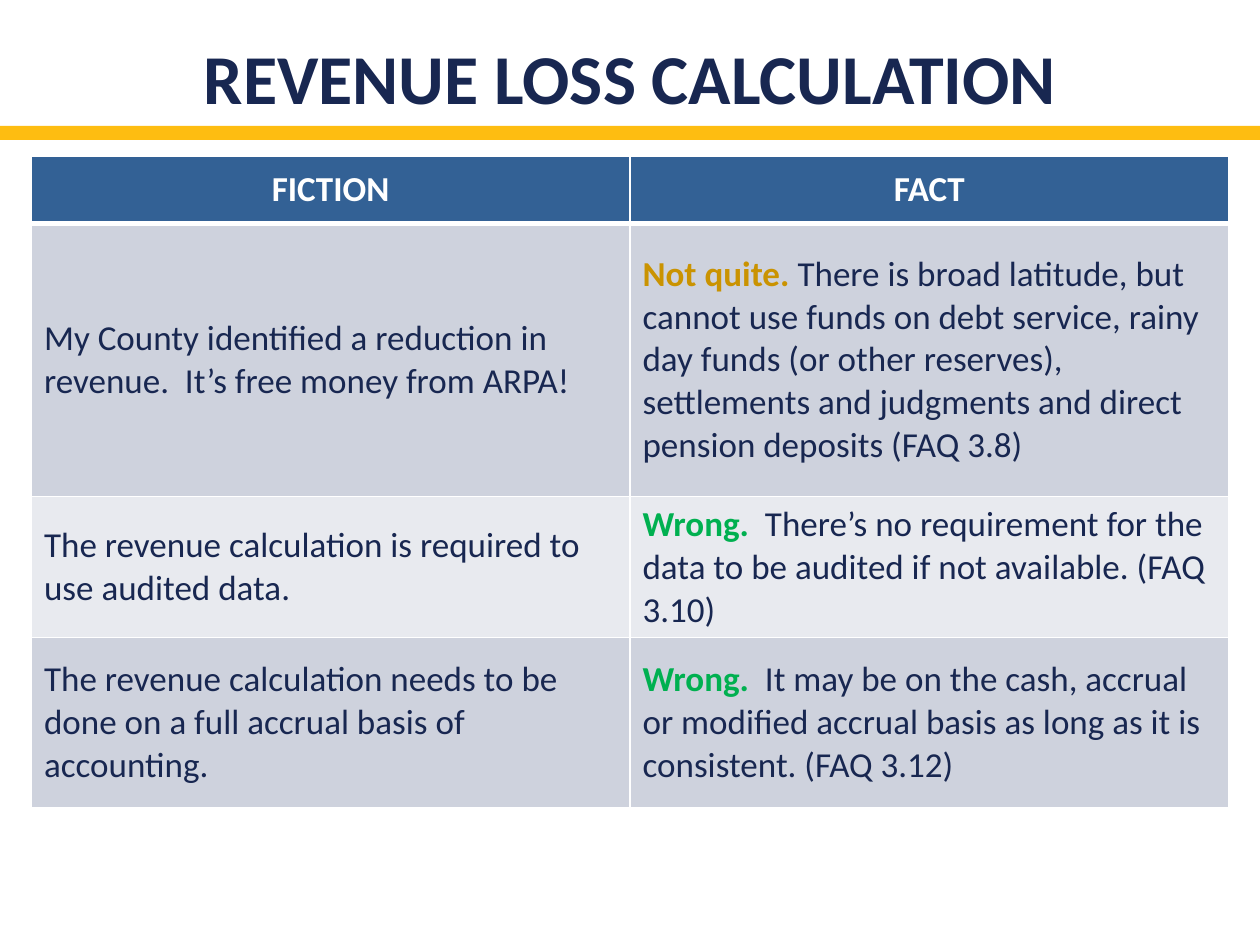
import pptx
import pptx.dml.color
import pptx.enum.shapes
import pptx.enum.text
import pptx.oxml
import pptx.oxml.ns
import pptx.util

Pt = pptx.util.Pt
RGBColor = pptx.dml.color.RGBColor
ALIGN = pptx.enum.text.PP_ALIGN
ANCHOR = pptx.enum.text.MSO_ANCHOR

NAVY = RGBColor(0x18, 0x27, 0x51)
YELLOW = RGBColor(0xFE, 0xBD, 0x11)
BLUE = RGBColor(0x33, 0x61, 0x95)
WHITE = RGBColor(0xFF, 0xFF, 0xFF)
GOLD = RGBColor(0xCA, 0x93, 0x01)
GREEN = RGBColor(0x00, 0xB0, 0x50)
DARK_BAND = RGBColor(0xCE, 0xD2, 0xDD)
LIGHT_BAND = RGBColor(0xE8, 0xEA, 0xEF)


def add_span(para, text, color, **formats):
    span = para.add_run()
    span.text = text
    span.font.color.rgb = color
    for name, value in {"name": "Calibri", "size": Pt(20), "bold": False, **formats}.items():
        setattr(span.font, name, value)


def set_borders(cell, bottom_width):
    properties = cell._tc.get_or_add_tcPr()
    widths = {"lnL": 1, "lnR": 1, "lnT": 1, "lnB": bottom_width}
    # Border lines come before the fill in a cell's properties
    for position, (side, width) in enumerate(widths.items()):
        properties.insert(position, pptx.oxml.parse_xml(
            f'<a:{side} {pptx.oxml.ns.nsdecls("a")} w="{Pt(width)}">'
            f'<a:solidFill><a:srgbClr val="{WHITE}"/></a:solidFill></a:{side}>'))


deck = pptx.Presentation()
deck.slide_width, deck.slide_height = Pt(720), Pt(540)
slide = deck.slides.add_slide(deck.slide_layouts[6])

# Yellow rule under the title
rule = slide.shapes.add_shape(
    pptx.enum.shapes.MSO_SHAPE.RECTANGLE, Pt(0), Pt(72), Pt(720), Pt(8))
rule.shadow.inherit = False
rule.fill.solid()
rule.fill.fore_color.rgb = YELLOW
rule.line.fill.background()

# Title
title = slide.shapes.add_textbox(Pt(18), Pt(0), Pt(684), Pt(72))
frame_formats = {"word_wrap": True, "vertical_anchor": ANCHOR.BOTTOM,
                 "margin_left": 0, "margin_right": 0}
for name, value in frame_formats.items():
    setattr(title.text_frame, name, value)
para = title.text_frame.paragraphs[0]
para.alignment = ALIGN.CENTER
para.line_spacing = 0.9
add_span(para, "REVENUE LOSS CALCULATION", NAVY, size=Pt(40), bold=True)

# Fiction and fact table: claim, verdict, verdict colour, explanation
HEADINGS = ["FICTION", "FACT"]
CLAIMS = [
    ("My County identified a reduction in revenue.  It’s free money from ARPA!",
     "Not quite. ", GOLD,
     "There is broad latitude, but cannot use funds on debt service, rainy day funds "
     "(or other reserves), settlements and judgments and direct pension deposits (FAQ 3.8)"),
    ("The revenue calculation is required to use audited data.",
     "Wrong.  ", GREEN,
     "There’s no requirement for the data to be audited if not available. (FAQ 3.10)"),
    ("The revenue calculation needs to be done on a full accrual basis of accounting.",
     "Wrong.  ", GREEN,
     "It may be on the cash, accrual or modified accrual basis as long as it is "
     "consistent. (FAQ 3.12)"),
]
ROW_HEIGHTS = [38.2, 156.2, 80.5, 97.2]
ROW_FILLS = [BLUE, DARK_BAND, LIGHT_BAND, DARK_BAND]

table = slide.shapes.add_table(
    len(ROW_HEIGHTS), 2, Pt(18), Pt(89.4), Pt(684), Pt(sum(ROW_HEIGHTS))).table
for row, height, fill in zip(table.rows, ROW_HEIGHTS, ROW_FILLS):
    row.height = Pt(height)
    for cell in row.cells:
        cell.fill.solid()
        cell.fill.fore_color.rgb = fill
        cell.vertical_anchor = ANCHOR.MIDDLE
        set_borders(cell, 3 if fill == BLUE else 1)

# Table wording
for column, heading in enumerate(HEADINGS):
    para = table.cell(0, column).text_frame.paragraphs[0]
    para.alignment = ALIGN.CENTER
    add_span(para, heading, WHITE, bold=True)
for row_number, (claim, verdict, verdict_color, explanation) in enumerate(CLAIMS, start=1):
    add_span(table.cell(row_number, 0).text_frame.paragraphs[0], claim, NAVY)
    para = table.cell(row_number, 1).text_frame.paragraphs[0]
    add_span(para, verdict, verdict_color, bold=True)
    add_span(para, explanation, NAVY)

deck.save("out.pptx")
